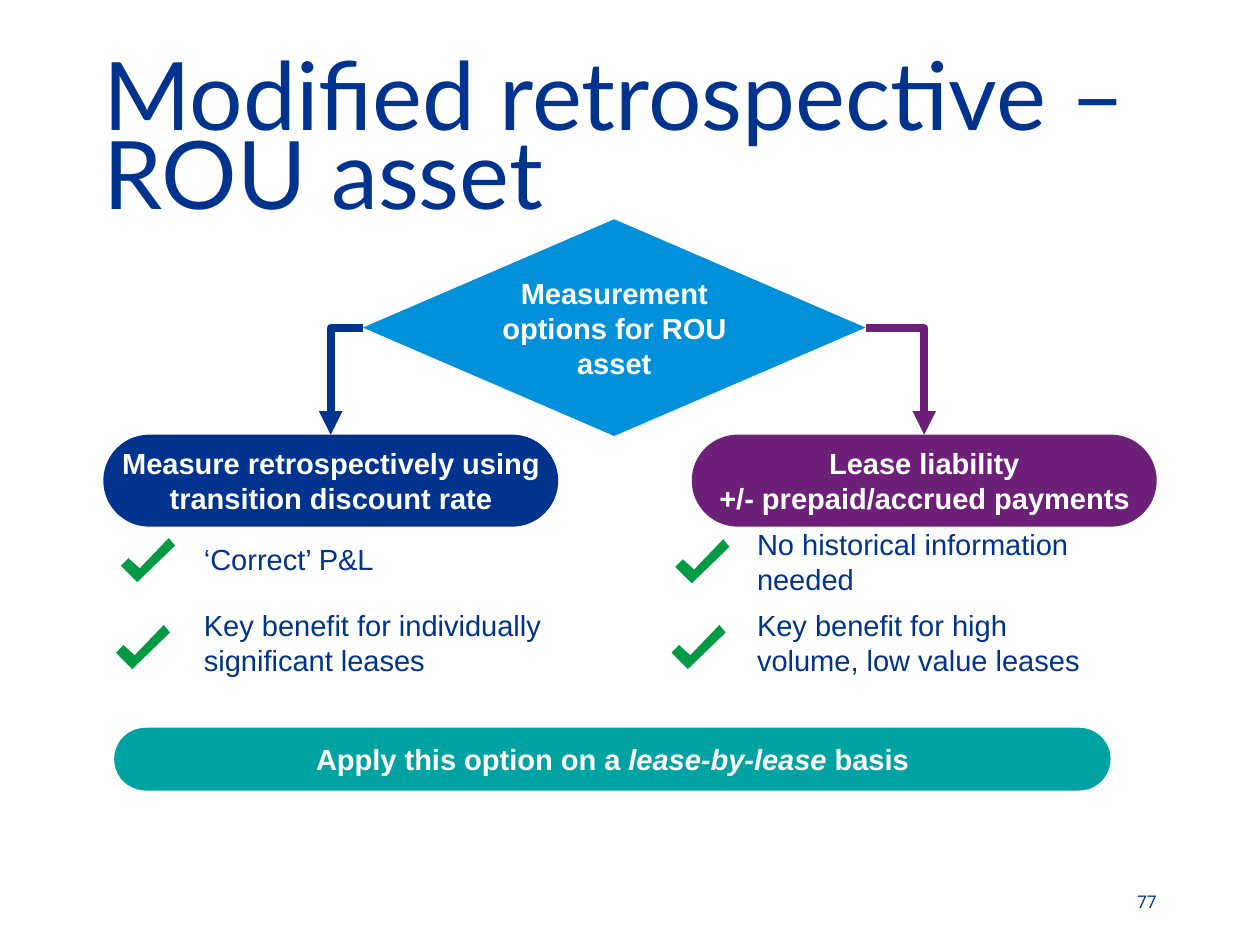
from lxml import etree
from pptx import Presentation
from pptx.dml.color import RGBColor
from pptx.enum.shapes import MSO_CONNECTOR, MSO_SHAPE
from pptx.enum.text import MSO_ANCHOR, MSO_AUTO_SIZE, PP_ALIGN
from pptx.oxml.ns import qn
from pptx.util import Inches, Pt

NAVY = RGBColor(0x00, 0x33, 0x8D)
BLUE = RGBColor(0x00, 0x91, 0xDA)
PURPLE = RGBColor(0x6D, 0x20, 0x77)
TEAL = RGBColor(0x00, 0xA3, 0xA1)
GREEN = RGBColor(0x00, 0x9A, 0x44)
WHITE = RGBColor(0xFF, 0xFF, 0xFF)
LEFT, CENTER, RIGHT = PP_ALIGN.LEFT, PP_ALIGN.CENTER, PP_ALIGN.RIGHT
TOP, MIDDLE, BOTTOM = MSO_ANCHOR.TOP, MSO_ANCHOR.MIDDLE, MSO_ANCHOR.BOTTOM
DIAMOND, PILL = MSO_SHAPE.FLOWCHART_DECISION, MSO_SHAPE.ROUNDED_RECTANGLE
ELBOW = MSO_CONNECTOR.ELBOW
NO_FIT = MSO_AUTO_SIZE.NONE
TITLE_ONLY = 5
TICK = [(0.38, 0), (0.43, 0.06), (0.13, 0.35), (0, 0.22), (0.06, 0.16), (0.15, 0.24)]


def set_text(sp, paragraphs, size=16.6, font="Arial", color=WHITE, bold=False,
             align=CENTER, anchor=MIDDLE, inset=(0.1, 0.05), spacing=None):
    """Fill a shape with paragraphs, each a list of (text, italic) runs."""
    tf = sp.text_frame
    tf.word_wrap = True
    tf.auto_size = NO_FIT
    tf.vertical_anchor = anchor
    tf.margin_left = tf.margin_right = Inches(inset[0])
    tf.margin_top = tf.margin_bottom = Inches(inset[1])
    for i, runs in enumerate(paragraphs):
        p = tf.add_paragraph() if i else tf.paragraphs[0]
        p.alignment = align
        if spacing:
            p.line_spacing = spacing
        for text, italic in runs:
            r = p.add_run()
            r.text = text
            r.font.name = font
            r.font.size = Pt(size)
            r.font.bold = bold
            r.font.italic = italic
            r.font.color.rgb = color


def plain(*lines):
    """Return upright single-run paragraphs."""
    return [[(line, False)] for line in lines]


def add_title(s, box, text):
    """Place and format the title placeholder."""
    sp = s.shapes.title
    sp.left, sp.top, sp.width, sp.height = map(Inches, box)
    set_text(sp, plain(text), size=54, font="Lato", color=NAVY, align=LEFT,
             anchor=TOP, inset=(0, 0), spacing=0.7)


def add_box(s, kind, box, fill, paragraphs, inset=(0.1, 0.05), outline=None):
    """Add a filled shape with bold white text."""
    sp = s.shapes.add_shape(kind, *map(Inches, box))
    sp.shadow.inherit = False
    sp.fill.solid()
    sp.fill.fore_color.rgb = fill
    if outline:
        sp.line.color.rgb = fill
        sp.line.width = Pt(outline)
    else:
        sp.line.fill.background()
    if kind == PILL:
        sp.adjustments[0] = 0.5
    set_text(sp, paragraphs, bold=True, inset=inset)
    return sp


def add_branch(s, start, site, end, color):
    """Join a side of the decision to the top of an option with an elbow arrow."""
    c = s.shapes.add_connector(ELBOW, 0, 0, 0, 0)
    c.begin_connect(start, site)
    c.end_connect(end, 0)
    c.line.color.rgb = color
    c.line.width = Pt(4.5)
    sp_pr = c._element.spPr
    sp_pr.find(qn("a:prstGeom")).set("prst", "bentConnector2")
    ln = sp_pr.find(qn("a:ln"))
    etree.SubElement(ln, qn("a:round"))
    etree.SubElement(ln, qn("a:tailEnd"), type="triangle")
    etree.SubElement(sp_pr, qn("a:effectLst"))


def add_label(s, box, text, **fmt):
    """Add a text box."""
    sp = s.shapes.add_textbox(*map(Inches, box))
    set_text(sp, plain(text), **{"color": NAVY, "align": LEFT, **fmt})


def add_benefit(s, tick_at, box, text):
    """Add a tick mark with its benefit beside it."""
    points = [(Inches(tick_at[0] + x), Inches(tick_at[1] + y)) for x, y in TICK]
    builder = s.shapes.build_freeform(*points[0])
    builder.add_line_segments(points[1:], close=True)
    sp = builder.convert_to_shape()
    sp.shadow.inherit = False
    sp.fill.solid()
    sp.fill.fore_color.rgb = GREEN
    sp.line.fill.background()
    add_label(s, box, text, anchor=TOP)


def add_option(s, decision, site, box, color, lines, benefits):
    """Add an option with its arrow and benefits."""
    option = add_box(s, PILL, box, color, plain(*lines), inset=(0, 0.05))
    add_branch(s, decision, site, option, color)
    for benefit in benefits:
        add_benefit(s, *benefit)


def main():
    """Build the slide and save it."""
    prs = Presentation()
    prs.slide_width, prs.slide_height = Inches(10), Inches(7.5)
    s = prs.slides.add_slide(prs.slide_layouts[TITLE_ONLY])
    add_title(s, (0.82, 0.53, 8.35, 0.57), "Modified retrospective – ROU asset")
    decision = add_box(s, DIAMOND, (2.88, 1.74, 3.99, 1.72), BLUE,
                       plain("Measurement options for ROU asset"))
    add_option(s, decision, 1, (0.82, 3.45, 3.61, 0.73), NAVY,
               ["Measure retrospectively using transition discount rate"],
               [((0.96, 4.27), (1.52, 4.25, 2.63, 0.38), "‘Correct’ P&L"),
                ((0.92, 4.96), (1.52, 4.77, 2.91, 0.66),
                 "Key benefit for individually significant leases")])
    add_option(s, decision, 3, (5.49, 3.45, 3.69, 0.73), PURPLE,
               ["Lease liability", "+/- prepaid/accrued payments"],
               [((5.36, 4.28), (5.91, 4.13, 2.89, 0.66),
                 "No historical information needed"),
                ((5.33, 4.96), (5.91, 4.77, 2.89, 0.66),
                 "Key benefit for high volume, low value leases")])
    add_box(s, PILL, (0.92, 5.79, 7.88, 0.47), TEAL,
            [[("Apply this option on a ", False), ("lease-by-lease", True),
              (" basis", False)]], outline=2)
    add_label(s, (7.87, 7.08, 1.31, 0.16), "77", size=10, font="Roboto",
              align=RIGHT, anchor=BOTTOM, inset=(0, 0))
    prs.save("out.pptx")


if __name__ == "__main__":
    main()
